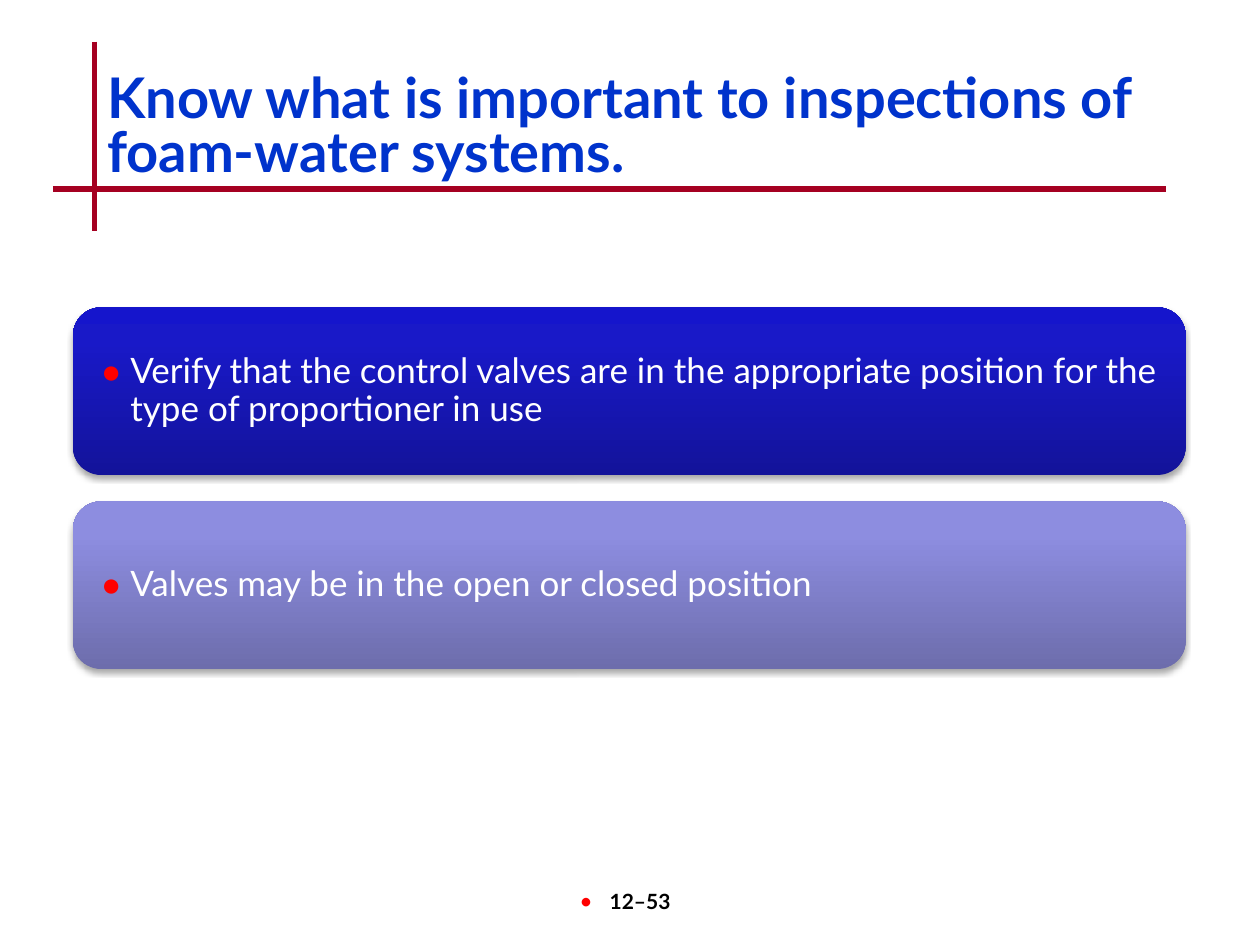
from dataclasses import dataclass

from lxml.etree import SubElement
from pptx import Presentation
from pptx.dml.color import RGBColor
from pptx.enum.shapes import MSO_CONNECTOR, MSO_SHAPE
from pptx.enum.text import MSO_ANCHOR, PP_ALIGN
from pptx.oxml import parse_xml
from pptx.oxml.ns import nsdecls, qn
from pptx.util import Inches, Pt


@dataclass(frozen=True)
class Theme:
    font: str = "Lato"
    title: str = "0033CC"
    rule: str = "A50021"
    bullet: str = "FF0000"
    card_text: str = "FFFFFF"
    number: str = "000000"
    title_size: int = 32
    card_size: int = 20
    number_size: int = 12
    rule_width: int = 3


@dataclass(frozen=True)
class Card:
    text: str
    stops: tuple[tuple[int, str], ...]


@dataclass(frozen=True)
class Rule:
    x1: float
    y1: float
    x2: float
    y2: float


THEME = Theme()
RULES = (Rule(0.75, 0.33, 0.75, 1.83), Rule(0.42, 1.5, 9.25, 1.5))
CARDS = (
    Card("Verify that the control valves are in the appropriate position "
         "for the type of proportioner in use",
         ((0, "13139A"), (80, "1919C8"), (100, "1515CC"))),
    Card("Valves may be in the open or closed position",
         ((0, "6D6DAC"), (80, "8D8DE0"), (100, "8C8CE2"))),
)
CARD_LEFT, CARD_TOP, CARD_WIDTH, CARD_HEIGHT = 0.58, 2.44, 8.83, 1.33
CARD_PITCH = 1.54
CARD_INSET = 0.15
HANGING = 0.24


def add_run(p, text: str, size: int, color: str, bold: bool = False) -> None:
    r = p.add_run()
    r.text = text
    r.font.name = THEME.font
    r.font.size = Pt(size)
    r.font.bold = bold
    r.font.color.rgb = RGBColor.from_string(color)


def add_bullet(p, percent: int) -> None:
    pPr = p._p.get_or_add_pPr()
    pPr.set("marL", str(Inches(HANGING)))
    pPr.set("indent", str(-Inches(HANGING)))
    color = SubElement(pPr, qn("a:buClr"))
    SubElement(color, qn("a:srgbClr"), val=THEME.bullet)
    SubElement(pPr, qn("a:buSzPct"), val=str(percent * 1000))
    SubElement(pPr, qn("a:buFont"), typeface=THEME.font)
    SubElement(pPr, qn("a:buChar"), char="•")


def add_rule(s, rule: Rule) -> None:
    line = s.shapes.add_connector(
        MSO_CONNECTOR.STRAIGHT,
        *map(Inches, (rule.x1, rule.y1, rule.x2, rule.y2)))
    line.line.color.rgb = RGBColor.from_string(THEME.rule)
    line.line.width = Pt(THEME.rule_width)
    SubElement(line._element.spPr, qn("a:effectLst"))


def style_card(sp, card: Card) -> None:
    """Fill from bottom to top and cast a soft shadow downwards."""
    sp.line.fill.background()
    stops = "".join(
        f'<a:gs pos="{pos * 1000}"><a:srgbClr val="{color}"/></a:gs>'
        for pos, color in card.stops)
    gradient = parse_xml(
        f'<a:gradFill {nsdecls("a")} rotWithShape="1"><a:gsLst>{stops}</a:gsLst>'
        '<a:lin ang="16200000" scaled="0"/></a:gradFill>')
    shadow = parse_xml(
        f'<a:effectLst {nsdecls("a")}><a:outerShdw blurRad="{Pt(3.1)}" '
        f'dist="{Pt(1.8)}" dir="5400000" rotWithShape="0">'
        '<a:srgbClr val="000000"><a:alpha val="35000"/></a:srgbClr>'
        '</a:outerShdw></a:effectLst>')
    spPr = sp._element.spPr
    spPr.find(qn("a:prstGeom")).addnext(gradient)
    spPr.append(shadow)


def add_card(s, row: int, card: Card) -> None:
    top = CARD_TOP + row * CARD_PITCH
    sp = s.shapes.add_shape(
        MSO_SHAPE.ROUNDED_RECTANGLE,
        *map(Inches, (CARD_LEFT, top, CARD_WIDTH, CARD_HEIGHT)))
    style_card(sp, card)
    tf = sp.text_frame
    tf.word_wrap = True
    tf.vertical_anchor = MSO_ANCHOR.MIDDLE
    tf.margin_left = tf.margin_right = Inches(CARD_INSET)
    tf.margin_top = tf.margin_bottom = Inches(CARD_INSET)
    p = tf.paragraphs[0]
    p.alignment = PP_ALIGN.LEFT
    p.line_spacing = 0.9
    add_bullet(p, 110)
    add_run(p, card.text, THEME.card_size, THEME.card_text)


def set_title(s, text: str) -> None:
    title = s.shapes.title
    title.left, title.top, title.width, title.height = map(
        Inches, (0.75, 0.55, 8.5, 1))
    tf = title.text_frame
    tf.word_wrap = True
    tf.vertical_anchor = MSO_ANCHOR.TOP
    p = tf.paragraphs[0]
    p.alignment = PP_ALIGN.LEFT
    p.line_spacing = 0.8
    add_run(p, text, THEME.title_size, THEME.title, bold=True)


def add_page_number(s, text: str) -> None:
    box = s.shapes.add_textbox(*map(Inches, (3.92, 7, 2.08, 0.5)))
    tf = box.text_frame
    tf.word_wrap = True
    p = tf.paragraphs[0]
    p.alignment = PP_ALIGN.CENTER
    add_bullet(p, 110)
    add_run(p, text, THEME.number_size, THEME.number, bold=True)


def main() -> None:
    prs = Presentation()
    prs.slide_width, prs.slide_height = Inches(10), Inches(7.5)
    s = prs.slides.add_slide(prs.slide_layouts[5])
    for rule in RULES:
        add_rule(s, rule)
    add_page_number(s, "12–53")
    set_title(s, "Know what is important to inspections of foam-water systems.")
    for row, card in enumerate(CARDS):
        add_card(s, row, card)
    prs.save("out.pptx")


if __name__ == "__main__":
    main()
